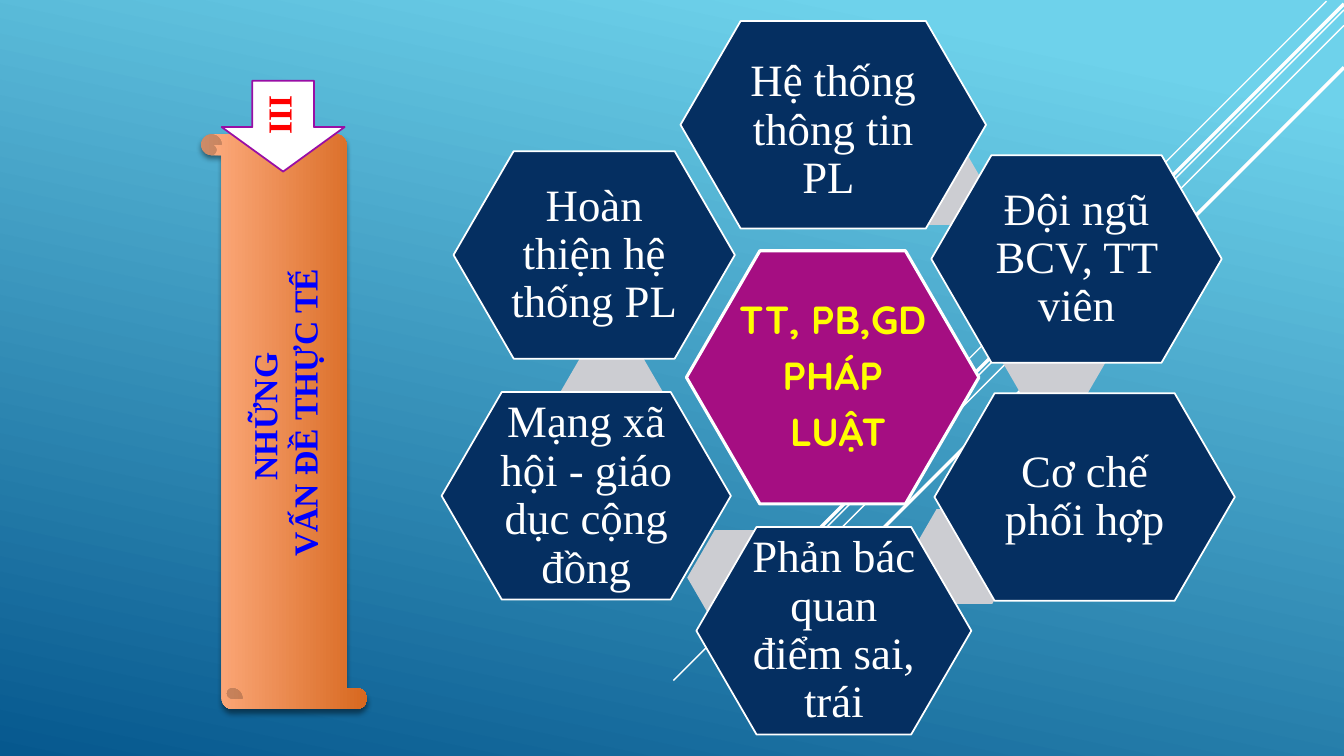
from lxml import etree
from pptx import Presentation
from pptx.dml.color import RGBColor
from pptx.enum.shapes import MSO_CONNECTOR, MSO_SHAPE
from pptx.enum.text import MSO_ANCHOR, PP_ALIGN
from pptx.oxml.ns import qn
from pptx.util import Cm, Pt

HEXAGON = MSO_SHAPE.HEXAGON
SCROLL = MSO_SHAPE.HORIZONTAL_SCROLL
ARROW = MSO_SHAPE.RIGHT_ARROW
STRAIGHT = MSO_CONNECTOR.STRAIGHT
MIDDLE = MSO_ANCHOR.MIDDLE
CENTER = PP_ALIGN.CENTER

TITLE = ["NHỮNG", " VẤN ĐỀ THỰC TẾ"]
NUMERAL = ["III"]
CORE = ["TT, PB,GD", "PHÁP", " LUẬT"]
CORE_BOX = (17.3, 6.32, 7.37, 6.38)
SCROLL_BOX = (-0.08, 8.53, 14.48, 4.19)
ARROW_BOX = (5.99, 1.63, 2.29, 3.1)

# text, left, top, width, label drop
RING = [
    ("Hệ thống thông tin PL ", 17.15, 0.53, 7.7, 0.15),
    ("Đội ngũ BCV, TT viên", 23.47, 3.91, 7.32, 0),
    ("Cơ chế phối hợp", 23.55, 9.91, 7.57, 0),
    ("Phản bác quan điểm sai, trái", 17.55, 13.28, 6.93, 0),
    ("Mạng xã hội - giáo dục cộng đồng", 11.13, 9.88, 7.29, 0),
    ("Hoàn thiện hệ thống PL", 11.43, 3.81, 7.09, 0),
]
RING_HEIGHT = 5.23
BRIDGES = [(21.92, 3.28), (25.17, 7.77), (22.91, 12.83), (17.32, 13.36), (14.02, 8.86)]
BRIDGE_SIZE = (2.79, 2.39)
LABEL_SHARE = 0.7

# start x, start y, diagonal run, line width
RAYS = [
    (33.43, 0.03, 10.58, 1),
    (33.87, 0.25, 16.9, 1),
    (33.87, 0.64, 13.76, 1),
    (33.87, 0.1, 13.48, 2.5),
    (33.87, 1.7, 12.07, 2.5),
]

THEME = {
    "sky": [(0.1, "6ED2EB"), (1, "06588E")],
    "paper": [(0, "FFAE82"), (1, "D7681F")],
    "white": "FFFFFF", "navy": "052F61", "magenta": "A50E82",
    "purple": "990EA5", "grey": "CCCDD2", "black": "000000",
    "serif": "Times New Roman", "round": "Quicksand",
    "title": ("Times New Roman", 24, "0000FF", True),
    "numeral": ("Times New Roman", 24, "FF0000", True),
    "core": ("Quicksand", 28, "FFFF00", True),
    "ring": ("Times New Roman", 32, "FFFFFF", False),
}


def color(name):
    return RGBColor.from_string(THEME[name])


def paint_gradient(fill, stops, angle):
    fill.gradient()
    fill.gradient_angle = 360 - angle
    for stop, (position, value) in zip(fill.gradient_stops, stops):
        stop.position = position
        stop.color.rgb = RGBColor.from_string(value)


def add_figure(page, kind, box, fill=None, line=None, width=0, adjustments=()):
    shape = page.shapes.add_shape(kind, *map(Cm, box))
    shape.shadow.inherit = False
    for index, value in enumerate(adjustments):
        shape.adjustments[index] = value
    if fill:
        shape.fill.solid()
        shape.fill.fore_color.rgb = color(fill)
    if line:
        shape.line.color.rgb = color(line)
        shape.line.width = Pt(width)
    else:
        shape.line.fill.background()
    return shape


def write(shape, lines, style, spaced=False):
    font, size, value, bold = THEME[style]
    frame = shape.text_frame
    frame.word_wrap = True
    frame.vertical_anchor = MIDDLE
    for index, line in enumerate(lines):
        para = frame.add_paragraph() if index else frame.paragraphs[0]
        para.alignment = CENTER
        if spaced:
            para.line_spacing = 0.9
            after = etree.SubElement(para._p.get_or_add_pPr(), qn("a:spcAft"))
            etree.SubElement(after, qn("a:spcPct"), val="35000")
        span = para.add_run()
        span.text = line
        span.font.name = font
        span.font.size = Pt(size)
        span.font.bold = bold
        span.font.color.rgb = RGBColor.from_string(value)


def add_label(page, hexagon_box, lines, style, drop=0):
    left, top, width, height = hexagon_box
    margin = (1 - LABEL_SHARE) / 2
    box = (left + width * margin, top + height * margin + drop,
           width * LABEL_SHARE, height * LABEL_SHARE)
    label = page.shapes.add_textbox(*map(Cm, box))
    frame = label.text_frame
    frame.margin_left = frame.margin_right = Cm(0.1)
    frame.margin_top = frame.margin_bottom = Cm(0.1)
    write(label, lines, style, spaced=True)


def add_ray(page, x, y, run, width):
    ray = page.shapes.add_connector(STRAIGHT, Cm(x), Cm(y), Cm(x - run), Cm(y + run))
    ray.line.color.rgb = color("white")
    ray.line.width = Pt(width)
    etree.SubElement(ray._element.spPr, qn("a:effectLst"))


def add_shadow(shape):
    effects = shape._element.spPr.find(qn("a:effectLst"))
    shadow = etree.SubElement(effects, qn("a:outerShdw"), blurRad=str(Pt(4)),
                              dist=str(Pt(3)), dir="5400000", rotWithShape="0")
    tint = etree.SubElement(shadow, qn("a:srgbClr"), val=THEME["black"])
    etree.SubElement(tint, qn("a:alpha"), val="46000")


def main():
    deck = Presentation()
    deck.slide_width, deck.slide_height = Cm(33.87), Cm(19.05)
    page = deck.slides.add_slide(deck.slide_layouts[6])
    paint_gradient(page.background.fill, THEME["sky"], 102)

    for ray in RAYS:
        add_ray(page, *ray)

    scroll = add_figure(page, SCROLL, SCROLL_BOX)
    paint_gradient(scroll.fill, THEME["paper"], 90)
    add_shadow(scroll)
    scroll.rotation = 270
    write(scroll, TITLE, "title")

    arrow = add_figure(page, ARROW, ARROW_BOX, "white", "purple", 1.25, (0.5, 0.49))
    arrow.rotation = 90
    write(arrow, NUMERAL, "numeral")

    add_figure(page, HEXAGON, CORE_BOX, "magenta", "white", 2.25, (0.29,))
    add_label(page, CORE_BOX, CORE, "core")

    for corner in BRIDGES:
        add_figure(page, HEXAGON, corner + BRIDGE_SIZE, "grey", adjustments=(0.29,))
    for text, left, top, width, drop in RING:
        box = (left, top, width, RING_HEIGHT)
        add_figure(page, HEXAGON, box, "navy", "white", 1.25, (0.29,))
        add_label(page, box, [text], "ring", drop)

    deck.save("out.pptx")


if __name__ == "__main__":
    main()
